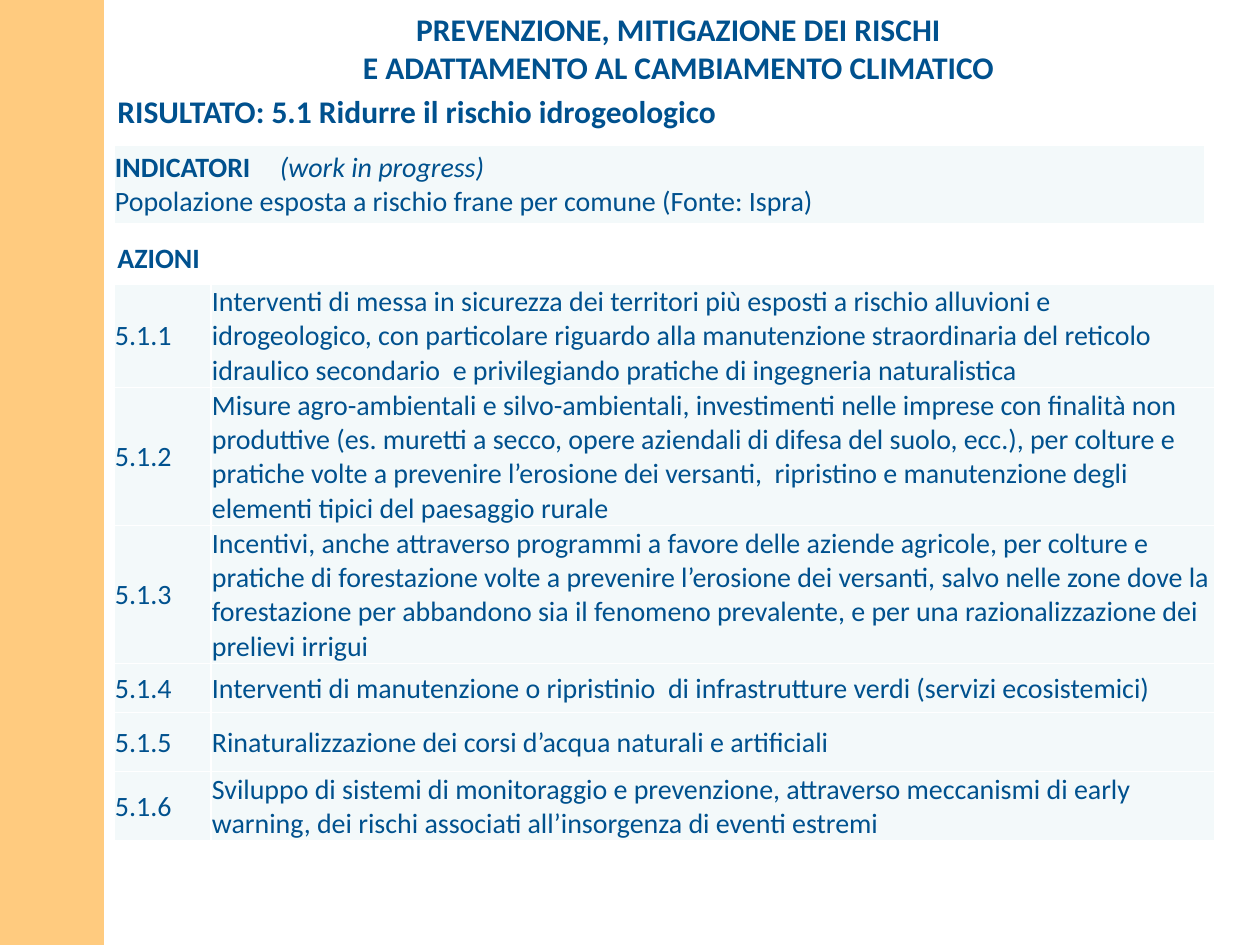
from lxml.etree import SubElement
from pptx import Presentation
from pptx.dml.color import RGBColor
from pptx.enum.shapes import MSO_SHAPE
from pptx.enum.text import MSO_ANCHOR, MSO_AUTO_SIZE, PP_ALIGN
from pptx.oxml.ns import qn
from pptx.util import Pt

SCALE = 914400 / 126
COLORS = {"bar": "FF9900", "text": "00518E", "cell": "F3F9FA", "white": "FFFFFF"}
BODY = {"name": "Calibri", "size": Pt(16), "bold": False, "italic": False}
BOLD = {**BODY, "bold": True}
ITALIC = {**BODY, "italic": True}
HEADING = {**BOLD, "size": Pt(18)}

ACTIONS = [
    (103, "Interventi di messa in sicurezza dei territori più esposti a rischio alluvioni e idrogeologico, "
          "con particolare riguardo alla manutenzione straordinaria del reticolo idraulico secondario  e "
          "privilegiando pratiche di ingegneria naturalistica"),
    (138, "Misure agro-ambientali e silvo-ambientali, investimenti nelle imprese con finalità non produttive "
          "(es. muretti a secco, opere aziendali di difesa del suolo, ecc.), per colture e pratiche volte a "
          "prevenire l’erosione dei versanti,  ripristino e manutenzione degli elementi tipici del paesaggio rurale"),
    (138, "Incentivi, anche attraverso programmi a favore delle aziende agricole, per colture e pratiche di "
          "forestazione volte a prevenire l’erosione dei versanti, salvo nelle zone dove la forestazione per "
          "abbandono sia il fenomeno prevalente, e per una razionalizzazione dei prelievi irrigui"),
    (49, "Interventi di manutenzione o ripristinio  di infrastrutture verdi (servizi ecosistemici)"),
    (59, "Rinaturalizzazione dei corsi d’acqua naturali e artificiali"),
    (69, "Sviluppo di sistemi di monitoraggio e prevenzione, attraverso meccanismi di early warning, "
         "dei rischi associati all’insorgenza di eventi estremi"),
]


def px(n):
    return round(n * SCALE)


def color(key):
    return RGBColor.from_string(COLORS[key])


def set_attrs(obj, values):
    for name, value in values.items():
        setattr(obj, name, value)


def fill_solid(obj, key):
    obj.fill.solid()
    obj.fill.fore_color.rgb = color(key)


def write(tf, paragraphs, align=PP_ALIGN.LEFT):
    for i, runs in enumerate(paragraphs):
        p = tf.add_paragraph() if i else tf.paragraphs[0]
        set_attrs(p, {"alignment": align, "space_before": Pt(0)})
        for text, font in runs:
            r = p.add_run()
            r.text = text
            set_attrs(r.font, font)
            r.font.color.rgb = color("text")


def add_side_bar(s, x, y, w, h):
    sp = s.shapes.add_shape(MSO_SHAPE.RECTANGLE, px(x), px(y), px(w), px(h))
    sp.shadow.inherit = False
    fill_solid(sp, "bar")
    sp.line.fill.background()
    SubElement(next(sp.element.iter(qn("a:srgbClr"))), qn("a:alpha"), val="50000")


def add_title(s, x, y, w, h, lines):
    sp = s.shapes.title
    set_attrs(sp, {"left": px(x), "top": px(y), "width": px(w), "height": px(h)})
    fill_solid(sp, "white")
    tf = sp.text_frame
    set_attrs(tf, {"margin_left": 0, "margin_top": 0, "margin_right": 0, "margin_bottom": 0,
                   "word_wrap": True, "auto_size": MSO_AUTO_SIZE.NONE,
                   "vertical_anchor": MSO_ANCHOR.MIDDLE})
    write(tf, [[(line, HEADING)] for line in lines], PP_ALIGN.CENTER)


def add_label(s, x, y, w, h, text, font):
    tf = s.shapes.add_textbox(px(x), px(y), px(w), px(h)).text_frame
    tf.word_wrap = True
    write(tf, [[(text, font)]])


def format_cell(cell, paragraphs):
    set_attrs(cell, {"margin_left": px(1), "margin_top": px(1), "margin_right": px(1),
                     "margin_bottom": 0, "vertical_anchor": MSO_ANCHOR.MIDDLE})
    tcPr = cell._tc.get_or_add_tcPr()
    for side in ("lnL", "lnR", "lnT", "lnB"):
        ln = SubElement(tcPr, qn(f"a:{side}"), w=str(Pt(1)))
        SubElement(SubElement(ln, qn("a:solidFill")), qn("a:srgbClr"), val=COLORS["white"])
    fill_solid(cell, "cell")
    write(cell.text_frame, paragraphs)


def add_grid(s, x, y, widths, heights, rows):
    table = s.shapes.add_table(len(heights), len(widths), px(x), px(y),
                               px(sum(widths)), px(sum(heights))).table
    set_attrs(table, {"first_row": False, "horz_banding": False})
    for col, w in zip(table.columns, widths):
        col.width = px(w)
    for row, h, contents in zip(table.rows, heights, rows):
        row.height = px(h)
        for cell, paragraphs in zip(row.cells, contents):
            format_cell(cell, paragraphs)
    return table


def add_indicators(s, x, y, w, h):
    paragraphs = [[("INDICATORI\t", BOLD), ("(work in progress)", ITALIC)],
                  [("Popolazione esposta a rischio frane per comune (Fonte: Ispra)", BODY)]]
    table = add_grid(s, x, y, [w], [h], [[paragraphs]])
    pPr = table.cell(0, 0).text_frame.paragraphs[0]._p.get_or_add_pPr()
    SubElement(SubElement(pPr, qn("a:tabLst")), qn("a:tab"), pos=str(px(165)), algn="l")


def add_actions(s, x, y, w, code_w):
    rows = [[[[(f"5.1.{i}", BODY)]], [[(text, BODY)]]]
            for i, (_, text) in enumerate(ACTIONS, 1)]
    add_grid(s, x, y, [code_w, w - code_w], [h for h, _ in ACTIONS], rows)


def main():
    prs = Presentation()
    set_attrs(prs, {"slide_width": px(1260), "slide_height": px(945)})
    s = prs.slides.add_slide(prs.slide_layouts[5])
    add_side_bar(s, 0, 0, 104, 945)
    add_title(s, 105, 6, 1147, 84,
              ["PREVENZIONE, MITIGAZIONE DEI RISCHI", "E ADATTAMENTO AL CAMBIAMENTO CLIMATICO"])
    add_actions(s, 114, 284, 1101, 97)
    add_indicators(s, 114, 145, 1091, 79)
    add_label(s, 105, 86, 1155, 50, "RISULTATO: 5.1 Ridurre il rischio idrogeologico", HEADING)
    add_label(s, 105, 234, 149, 47, "AZIONI", BOLD)
    prs.save("out.pptx")


if __name__ == "__main__":
    main()
